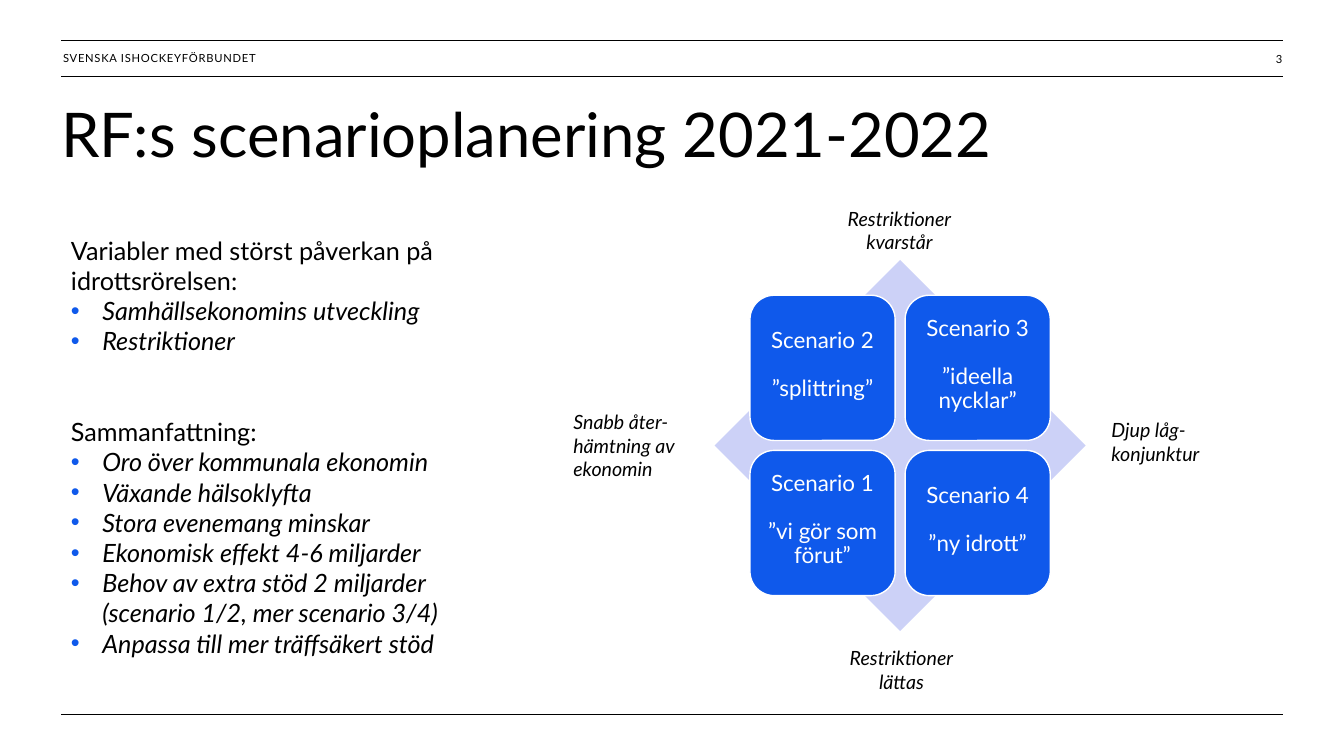
from dataclasses import dataclass

from lxml import etree
from pptx import Presentation
from pptx.dml.color import RGBColor
from pptx.enum.shapes import MSO_CONNECTOR, MSO_SHAPE
from pptx.enum.text import MSO_ANCHOR as Anchor, PP_ALIGN as Align
from pptx.oxml.ns import qn
from pptx.util import Cm, Pt


@dataclass(frozen=True)
class Theme:
    """Colours, font and type sizes of the slide."""
    font: str = "Lato"
    black: str = "000000"
    white: str = "FFFFFF"
    blue: str = "0F59EB"
    lavender: str = "CCD1F7"
    header: int = 8
    title: int = 44
    body: int = 18
    scenario: int = 16
    label: int = 14


THEME = Theme()
PADDING = (0.25, 0.13, 0.25, 0.13)


def style(paragraph, size, color=THEME.black, italic=False, tracking=None):
    """Format every run of a paragraph."""
    for run in paragraph.runs:
        font = run.font
        font.name, font.size, font.italic = THEME.font, Pt(size), italic
        font.color.rgb = RGBColor.from_string(color)
        if tracking:
            run._r.get_or_add_rPr().set("spc", str(tracking))


def set_frame(frame, insets, anchor=Anchor.TOP):
    """Set wrapping, insets and anchor of a text frame."""
    frame.word_wrap = True
    frame.vertical_anchor = anchor
    (frame.margin_left, frame.margin_top,
     frame.margin_right, frame.margin_bottom) = map(Cm, insets)


def add_text(slide, box, text, size, align=Align.LEFT, insets=PADDING,
             anchor=Anchor.TOP, italic=False, tracking=None):
    """Add a one-paragraph text box and return its paragraph."""
    frame = slide.shapes.add_textbox(*map(Cm, box)).text_frame
    set_frame(frame, insets, anchor)
    paragraph = frame.paragraphs[0]
    paragraph.text, paragraph.alignment = text, align
    style(paragraph, size, italic=italic, tracking=tracking)
    return paragraph


def add_rule(slide, left, right, y):
    """Add a thin black horizontal line."""
    line = slide.shapes.add_connector(
        MSO_CONNECTOR.STRAIGHT, Cm(left), Cm(y), Cm(right), Cm(y))
    line.line.width = Pt(1)
    line.line.color.rgb = RGBColor.from_string(THEME.black)
    etree.SubElement(line._element.spPr, qn("a:effectLst"))


def add_solid(slide, kind, box, color):
    """Add a filled preset shape without shadow or outline."""
    shape = slide.shapes.add_shape(kind, *map(Cm, box))
    shape.shadow.inherit = False
    shape.fill.solid()
    shape.fill.fore_color.rgb = RGBColor.from_string(color)
    shape.line.fill.background()
    return shape


def add_bullet(paragraph):
    """Give a paragraph a blue bullet and a hanging indent."""
    properties = paragraph._p.get_or_add_pPr()
    properties.set("marL", str(Cm(0.79)))
    properties.set("indent", str(-Cm(0.79)))
    color = etree.SubElement(properties, qn("a:buClr"))
    etree.SubElement(color, qn("a:srgbClr"), val=THEME.blue)
    etree.SubElement(properties, qn("a:buFont"), typeface="Arial")
    etree.SubElement(properties, qn("a:buChar"), char="•")


def add_page_frame(slide, left, top, width, height):
    """Place the rules, running header, page number and title."""
    right = left + width
    for y in (top, top + 0.91, top + height):
        add_rule(slide, left, right, y)
    add_text(slide, (left + 0.05, top, 8.53, 0.89), "SVENSKA ISHOCKEYFÖRBUNDET",
             THEME.header, insets=(0, 0, 0, 0), anchor=Anchor.MIDDLE, tracking=50)
    add_text(slide, (right - 2.28, top, 2.26, 0.86), "3", THEME.header, Align.RIGHT,
             (0, 0.1, 0, 0), Anchor.MIDDLE, tracking=50)
    title = add_text(slide, (left, top + 1.6, width, 3.2),
                     "RF:s scenarioplanering 2021-2022", THEME.title,
                     insets=(0, 0, 0, 0))
    title.line_spacing = 0.9


def add_summary(slide, *box):
    """Place the headed bullet lists."""
    sections = {
        "Variabler med störst påverkan på idrottsrörelsen:": (
            "Samhällsekonomins utveckling",
            "Restriktioner",
        ),
        "Sammanfattning:": (
            "Oro över kommunala ekonomin",
            "Växande hälsoklyfta",
            "Stora evenemang minskar",
            "Ekonomisk effekt 4-6 miljarder",
            "Behov av extra stöd 2 miljarder (scenario 1/2, mer scenario 3/4)",
            "Anpassa till mer träffsäkert stöd",
        ),
    }
    frame = slide.shapes.add_textbox(*map(Cm, box)).text_frame
    set_frame(frame, PADDING)
    for index, (heading, items) in enumerate(sections.items()):
        paragraph = frame.add_paragraph() if index else frame.paragraphs[0]
        paragraph.text = heading
        if index:
            paragraph.space_before = Pt(43.2)
        style(paragraph, THEME.body)
        for item in items:
            paragraph = frame.add_paragraph()
            paragraph.text = item
            add_bullet(paragraph)
            style(paragraph, THEME.body, italic=True)


def add_scenario(slide, box, name, motto):
    """Place one rounded scenario tile."""
    tile = add_solid(slide, MSO_SHAPE.ROUNDED_RECTANGLE, box, THEME.blue)
    tile.line.color.rgb = RGBColor.from_string(THEME.white)
    tile.line.width = Pt(1)
    frame = tile.text_frame
    set_frame(frame, (0.17, 0.17, 0.17, 0.3), Anchor.MIDDLE)
    frame.text = f"{name}\n{motto}"
    for paragraph in frame.paragraphs:
        paragraph.alignment, paragraph.line_spacing = Align.CENTER, 0.9
        style(paragraph, THEME.scenario, THEME.white)
    frame.paragraphs[1].space_before = Pt(17.3)


def add_scenario_matrix(slide, left, top, side):
    """Place the diamond, its four scenarios and the axis labels."""
    add_solid(slide, MSO_SHAPE.DIAMOND, (left, top, side, side), THEME.lavender)
    tile, gap = 3.66, 0.25
    margin = (side - 2 * tile - gap) / 2
    scenarios = (
        ("Scenario 2", "”splittring”"),
        ("Scenario 3", "”ideella nycklar”"),
        ("Scenario 1", "”vi gör som förut”"),
        ("Scenario 4", "”ny idrott”"),
    )
    for index, (name, motto) in enumerate(scenarios):
        row, column = divmod(index, 2)
        x = left + margin + column * (tile + gap)
        y = top + margin + row * (tile + gap)
        add_scenario(slide, (x, y, tile, tile), name, motto)
    labels = (
        ("Djup låg-konjunktur", 9.75, 3.86, 1.45, Align.LEFT),
        ("Snabb åter-\vhämtning av\vekonomin", -3.81, 3.66, 2.06, Align.LEFT),
        ("Restriktioner\vkvarstår", 2.54, -1.47, 1.45, Align.CENTER),
        ("Restriktioner\vlättas", 2.59, 9.6, 1.45, Align.CENTER),
    )
    for text, x, y, height, align in labels:
        add_text(slide, (left + x, top + y, 4.24, height), text, THEME.label,
                 align, italic=True)


def main():
    """Build and save the presentation."""
    presentation = Presentation()
    presentation.slide_width, presentation.slide_height = Cm(33.87), Cm(19.05)
    slide = presentation.slides.add_slide(presentation.slide_layouts[6])
    add_page_frame(slide, 1.54, 1.02, 30.8, 16.99)
    add_scenario_matrix(slide, 18.01, 6.55, 9.35)
    add_summary(slide, 1.54, 5.79, 11.48, 11.79)
    presentation.save("out.pptx")


if __name__ == "__main__":
    main()
